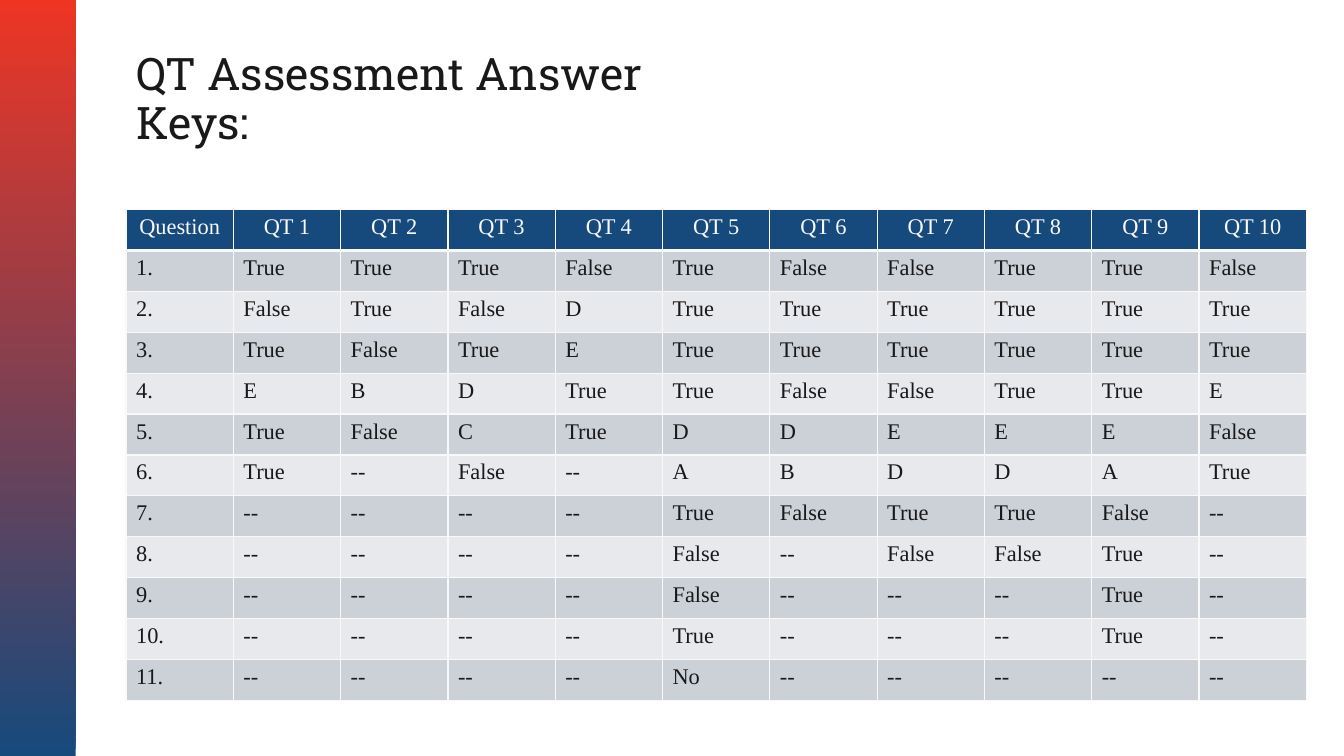
from lxml import etree
from pptx import Presentation
from pptx.dml.color import RGBColor
from pptx.enum.shapes import MSO_SHAPE
from pptx.enum.text import MSO_ANCHOR, MSO_AUTO_SIZE, PP_ALIGN
from pptx.oxml.ns import qn
from pptx.util import Inches, Pt

RECT = MSO_SHAPE.RECTANGLE
MIDDLE = MSO_ANCHOR.MIDDLE
FIXED = MSO_AUTO_SIZE.NONE
LEFT, CENTER = PP_ALIGN.LEFT, PP_ALIGN.CENTER

# Answers to each question, QT 1 to QT 10
ANSWERS = """
True True True False True False False True True False
False True False D True True True True True True
True False True E True True True True True True
E B D True True False False True True E
True False C True D D E E E False
True -- False -- A B D D A True
-- -- -- -- True False True True False --
-- -- -- -- False -- False False True --
-- -- -- -- False -- -- -- True --
-- -- -- -- True -- -- -- True --
-- -- -- -- No -- -- -- -- --
"""


def color(code):
    return RGBColor.from_string(code)


class Deck:
    blue, red, ink, pale = "174A7C", "EE3524", "191919", "F9F9F9"
    bands = ("E8E9EC", "CCD0D7")
    head, body = "Roboto Slab", "Times New Roman"

    def __init__(self):
        self.prs = Presentation()
        self.prs.slide_width = Inches(13.33)
        self.prs.slide_height = Inches(7.5)
        self.slide = self.prs.slides.add_slide(self.prs.slide_layouts[5])

    def style(self, para, font, size, code, align):
        para.alignment = align
        for run in para.runs:
            run.font.name = font
            run.font.size = Pt(size)
            run.font.color.rgb = color(code)

    def stripe(self, left, top, width, height):
        bar = self.slide.shapes.add_shape(
            RECT, Inches(left), Inches(top), Inches(width), Inches(height))
        bar.shadow.inherit = False
        bar.line.fill.background()
        bar.fill.gradient()
        bar.fill.gradient_angle = 90
        for stop, code in zip(bar.fill.gradient_stops, (self.blue, self.red)):
            stop.color.rgb = color(code)

    def title(self, text, left, top, width, height):
        box = self.slide.shapes.title
        box.left, box.top = Inches(left), Inches(top)
        box.width, box.height = Inches(width), Inches(height)
        frame = box.text_frame
        frame.text = text
        frame.word_wrap = True
        frame.auto_size = FIXED
        frame.vertical_anchor = MIDDLE
        para = frame.paragraphs[0]
        para.line_spacing = 0.9
        self.style(para, self.head, 32, self.ink, LEFT)

    def border(self, cell, side, width):
        props = cell._tc.get_or_add_tcPr()
        line = etree.SubElement(props, qn(f"a:ln{side}"), w=str(Pt(width)))
        fill = etree.SubElement(line, qn("a:solidFill"))
        etree.SubElement(fill, qn("a:srgbClr"), val=self.pale)

    def cell(self, cell, text, row):
        top = row == 0
        cell.text = text
        self.style(cell.text_frame.paragraphs[0], self.body, 16,
                   self.pale if top else self.ink, CENTER if top else LEFT)
        # Borders come before the fill in the cell properties
        for side in "LRTB":
            thick = (top and side == "B") or (row == 1 and side == "T")
            self.border(cell, side, 3 if thick else 1)
        cell.fill.solid()
        cell.fill.fore_color.rgb = color(self.blue if top else self.bands[row % 2])

    def table(self, rows, left, top, width, height):
        grid = self.slide.shapes.add_table(
            len(rows), len(rows[0]), Inches(left), Inches(top),
            Inches(width), Inches(height)).table
        for r, row in enumerate(rows):
            for c, text in enumerate(row):
                self.cell(grid.cell(r, c), text, r)


def main():
    deck = Deck()

    # Side stripe and title
    deck.stripe(0, 0, 0.75, 7.5)
    deck.title("QT Assessment Answer Keys:", 1.25, 0.42, 6.29, 1.15)

    # Answer table
    lines = ANSWERS.strip().splitlines()
    rows = [["Question"] + [f"QT {n}" for n in range(1, 11)]]
    rows += [[f"{n}."] + line.split() for n, line in enumerate(lines, 1)]
    deck.table(rows, 1.25, 2.08, 11.71, 4.87)

    deck.prs.save("out.pptx")


if __name__ == "__main__":
    main()
